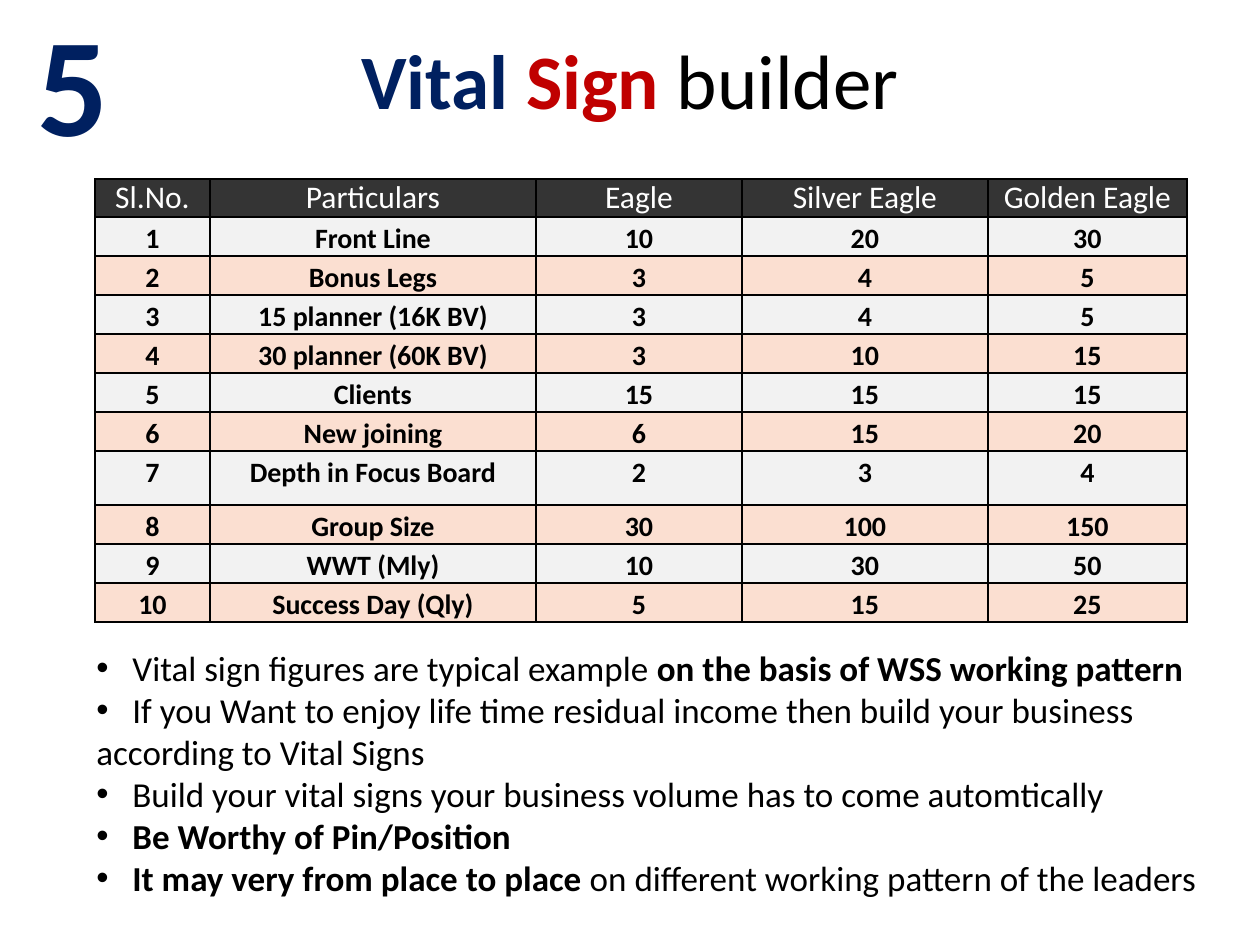
"""Build the vital sign builder slide with its target table and notes."""
from lxml.etree import SubElement
from pptx import Presentation
from pptx.dml.color import RGBColor
from pptx.enum.text import MSO_ANCHOR as Anchor, MSO_AUTO_SIZE as AutoSize, PP_ALIGN as Align
from pptx.oxml.ns import qn
from pptx.util import Emu, Pt

NAVY = RGBColor(0x00, 0x20, 0x60)
RED = RGBColor(0xC0, 0x00, 0x00)
BLACK = RGBColor(0x00, 0x00, 0x00)
WHITE = RGBColor(0xFF, 0xFF, 0xFF)
CHARCOAL = RGBColor(0x34, 0x34, 0x34)
GRAY = RGBColor(0xF2, 0xF2, 0xF2)
PEACH = RGBColor(0xFB, 0xDF, 0xD1)

COLUMN_WIDTHS = [115, 326, 206, 246, 199]
ROW_HEIGHTS = [38] + [39] * 6 + [54] + [39] * 3
HEADINGS = ["Sl.No.", "Particulars", "Eagle", "Silver Eagle", "Golden Eagle"]
TARGETS = [
    ("Front Line", 10, 20, 30),
    ("Bonus Legs", 3, 4, 5),
    ("15 planner (16K BV)", 3, 4, 5),
    ("30 planner (60K BV)", 3, 10, 15),
    ("Clients", 15, 15, 15),
    ("New joining", 6, 15, 20),
    ("Depth in Focus Board", 2, 3, 4),
    ("Group Size", 30, 100, 150),
    ("WWT (Mly)", 10, 30, 50),
    ("Success Day (Qly)", 5, 15, 25),
]
NOTES = [
    [("Vital sign figures are typical example ", False),
     ("on the basis of WSS working pattern", True)],
    [("If you Want to enjoy life time residual income then build your business "
      "according to Vital Signs", False)],
    [("Build your vital signs your business volume has to come automtically", False)],
    [("Be Worthy of Pin/Position", True)],
    [("It may very from place to place ", True),
     ("on different working pattern of the leaders", False)],
]


def px(length):
    """Turn pixels into EMU."""
    return Emu(round(length * 914400 / 126))


def add_text(para, text, size=20, color=BLACK, bold=False, font="Calibri", spacing=None):
    """Append a formatted span to a paragraph."""
    span = para.add_run()
    span.text = text
    span.font.name = font
    span.font.size = Pt(size)
    span.font.bold = bold
    span.font.color.rgb = color
    if spacing:
        span.font._element.set("spc", str(round(spacing * 100)))


class SlideBuilder:
    """Hold the style and the current slide."""

    def __init__(self, slide, border=BLACK, border_width=1, bullet="•", bullet_tab=36):
        self.slide = slide
        self.border = border
        self.border_width = border_width
        self.bullet = bullet
        self.bullet_tab = bullet_tab

    def text_box(self, left, top, width, height, anchor=Anchor.TOP, grow=False):
        """Add a wrapping text box and return its frame."""
        box = self.slide.shapes.add_textbox(px(left), px(top), px(width), px(height))
        frame = box.text_frame
        frame.word_wrap = True
        frame.vertical_anchor = anchor
        frame.auto_size = AutoSize.SHAPE_TO_FIT_TEXT if grow else AutoSize.NONE
        return frame

    def line(self, frame, spans):
        """Fill the frame with one centred line of formatted spans."""
        para = frame.paragraphs[0]
        para.alignment = Align.CENTER
        for text, style in spans:
            add_text(para, text, **style)

    def bullets(self, frame, notes):
        """Fill the frame with bullets whose wrapped lines return to the left edge."""
        for index, note in enumerate(notes):
            para = frame.add_paragraph() if index else frame.paragraphs[0]
            properties = para._p.get_or_add_pPr()
            properties.set("marL", "0")
            properties.set("indent", "0")
            SubElement(properties, qn("a:buFont"), typeface="Arial")
            SubElement(properties, qn("a:buChar"), char=self.bullet)
            tabs = SubElement(properties, qn("a:tabLst"))
            SubElement(tabs, qn("a:tab"), pos=str(px(self.bullet_tab)), algn="l")
            for position, (text, bold) in enumerate(note):
                add_text(para, text if position else "\t" + text, bold=bold)

    def cell_borders(self, cell):
        """Draw the four borders of a cell."""
        properties = cell._tc.get_or_add_tcPr()
        for side in ("lnL", "lnR", "lnT", "lnB"):
            edge = SubElement(properties, qn(f"a:{side}"), w=str(Pt(self.border_width)))
            fill = SubElement(edge, qn("a:solidFill"))
            SubElement(fill, qn("a:srgbClr"), val=str(self.border))

    def cell(self, cell, text, fill, header):
        """Style and fill one table cell."""
        cell.margin_left = cell.margin_right = px(2)
        cell.margin_top = cell.margin_bottom = 0
        self.cell_borders(cell)
        cell.fill.solid()
        cell.fill.fore_color.rgb = fill
        para = cell.text_frame.paragraphs[0]
        para.alignment = Align.CENTER
        if header:
            add_text(para, text, size=18, color=WHITE)
        else:
            para.line_spacing = 1.15
            para.space_after = Pt(10)
            add_text(para, text, size=16, bold=True)

    def table(self, left, top, widths, heights, rows):
        """Add a table with a dark header and alternating body rows."""
        frame = self.slide.shapes.add_table(
            len(heights), len(widths), px(left), px(top), px(sum(widths)), px(sum(heights)))
        table = frame.table
        table.horz_banding = False
        for column, width in zip(table.columns, widths):
            column.width = px(width)
        for index, (row, height, values) in enumerate(zip(table.rows, heights, rows)):
            row.height = px(height)
            fill = (GRAY if index % 2 else PEACH) if index else CHARCOAL
            for cell, value in zip(row.cells, values):
                self.cell(cell, str(value), fill, header=index == 0)


def main():
    """Build and save the deck."""
    deck = Presentation()
    deck.slide_width, deck.slide_height = px(1260), px(945)
    page = SlideBuilder(deck.slides.add_slide(deck.slide_layouts[6]))

    page.line(page.text_box(63, 21, 1134, 116, anchor=Anchor.MIDDLE), [
        ("Vital ", dict(size=44, color=NAVY, bold=True)),
        ("Sign", dict(size=44, color=RED, bold=True)),
        (" builder", dict(size=44)),
    ])
    page.bullets(page.text_box(84, 640, 1155, 267, grow=True), NOTES)
    page.line(page.text_box(10, -10, 126, 183, grow=True), [
        ("5", dict(size=80, color=NAVY, bold=True, spacing=0.5)),
    ])
    body = [(number, *target) for number, target in enumerate(TARGETS, start=1)]
    page.table(95, 179, COLUMN_WIDTHS, ROW_HEIGHTS, [HEADINGS] + body)
    deck.save("out.pptx")


if __name__ == "__main__":
    main()
